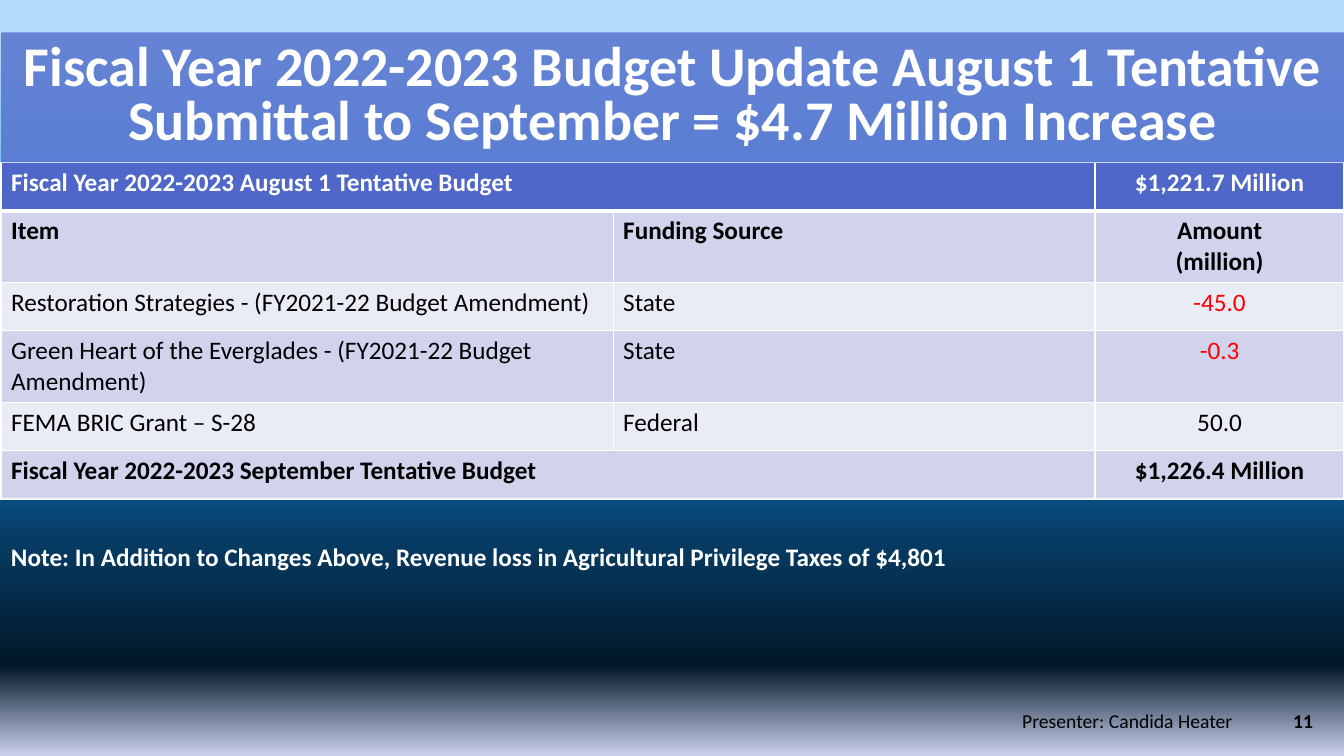
from typing import NamedTuple

from lxml.etree import SubElement
from pptx import Presentation
from pptx.dml.color import RGBColor
from pptx.enum.shapes import MSO_SHAPE
from pptx.enum.text import MSO_ANCHOR, PP_ALIGN
from pptx.oxml import parse_xml
from pptx.oxml.ns import nsdecls, qn
from pptx.util import Inches, Pt

WIDE, HIGH = Inches(13.33), Inches(7.5)
WHITE, BLACK, RED = "FFFFFF", "000000", "FF0000"
BLUE, DARK, LIGHT = "4E67C8", "D0D3EB", "E9EBF5"
LEFT, MID, RIGHT = PP_ALIGN.LEFT, PP_ALIGN.CENTER, PP_ALIGN.RIGHT
STOPS = [(3, "B4DCFA"), (17, "8CC9F7"), (36, "4FADF3"), (54, "0D79CA"),
         (71, "073C65"), (88, "031828"), (100, "CAD1EE")]


class Box(NamedTuple):
    """Place and size in percent of the slide."""
    x: float
    y: float
    w: float
    h: float


class Row(NamedTuple):
    item: str
    source: str
    amount: str
    fill: str
    high: float
    ink: str = BLACK
    tint: str = BLACK
    bold: bool = False
    span: bool = False


COLS = [45.54, 35.86, 18.53]
ONE, TWO = 6.4, 9.47  # heights of rows with one and two lines
ROWS = [
    Row("Fiscal Year 2022-2023 August 1 Tentative Budget", "", "$1,221.7 Million",
        BLUE, ONE, WHITE, WHITE, bold=True, span=True),
    Row("Item", "Funding Source", "Amount\n(million)", DARK, TWO, bold=True),
    Row("Restoration Strategies - (FY2021-22 Budget Amendment)", "State", "-45.0",
        LIGHT, ONE, tint=RED),
    Row("Green Heart of the Everglades - (FY2021-22 Budget Amendment)", "State", "-0.3",
        DARK, TWO, tint=RED),
    Row("FEMA BRIC Grant – S-28", "Federal", "50.0", LIGHT, ONE),
    Row("Fiscal Year 2022-2023 September Tentative Budget", "", "$1,226.4 Million",
        DARK, ONE, bold=True, span=True),
]


def wide(part: float) -> int:
    return round(WIDE * part / 100)


def high(part: float) -> int:
    return round(HIGH * part / 100)


def place(box: Box) -> tuple[int, int, int, int]:
    return wide(box.x), high(box.y), wide(box.w), high(box.h)


def paint(target, color: str) -> None:
    """Give a fill or a font a solid colour."""
    if hasattr(target, "solid"):
        target.solid()
        target.fore_color.rgb = RGBColor.from_string(color)
    else:
        target.color.rgb = RGBColor.from_string(color)


def write(frame, text: str, *, size: int = 18, color: str = BLACK, bold: bool = False,
          align: PP_ALIGN = LEFT, space: float | None = None) -> None:
    frame.word_wrap = True
    frame.text = text
    for para in frame.paragraphs:
        para.alignment = align
        para.line_spacing = space
        font = para.runs[0].font
        font.name, font.size, font.bold = "Calibri", Pt(size), bold
        paint(font, color)


def label(slide, box: Box, text: str, anchor: MSO_ANCHOR = MSO_ANCHOR.TOP, **form) -> None:
    frame = slide.shapes.add_textbox(*place(box)).text_frame
    write(frame, text, **form)
    frame.vertical_anchor = anchor


def border(cell, top: float, base: float) -> None:
    props = cell._tc.get_or_add_tcPr()
    for spot, (side, size) in enumerate(zip("LRTB", (1, 1, top, base))):
        props.insert(spot, parse_xml(
            f'<a:ln{side} {nsdecls("a")} w="{Pt(size)}"><a:solidFill>'
            f'<a:srgbClr val="{WHITE}"/></a:solidFill></a:ln{side}>'))


def backdrop(slide) -> None:
    fill = slide.background.fill
    fill.gradient()
    fill.gradient_angle = 270
    stops = next(slide.element.iter(qn("a:gsLst")))
    for old in list(stops):
        stops.remove(old)
    for share, color in STOPS:
        stop = SubElement(stops, qn("a:gs"), pos=str(share * 1000))
        SubElement(stop, qn("a:srgbClr"), val=color)


def budget(slide, box: Box) -> None:
    table = slide.shapes.add_table(len(ROWS), len(COLS), *place(box)).table
    table.first_row = table.horz_banding = False
    for col, part in zip(table.columns, COLS):
        col.width = wide(part)
    for at, row in enumerate(ROWS):
        table.rows[at].height = high(row.high)
        if row.span:
            table.cell(at, 0).merge(table.cell(at, 1))
        for col, text in enumerate((row.item, row.source, row.amount)):
            cell = table.cell(at, col)
            paint(cell.fill, row.fill)
            border(cell, top=3 if at == 1 else 1, base=3 if at == 0 else 1)
            if text:
                last = col == 2
                write(cell.text_frame, text, color=row.tint if last else row.ink,
                      bold=row.bold, align=MID if last else LEFT)


def banner(slide, box: Box, text: str) -> None:
    shape = slide.shapes.add_shape(MSO_SHAPE.RECTANGLE, *place(box))
    shape.shadow.inherit = False
    shape.line.fill.background()
    paint(shape.fill, BLUE)
    tone = shape.element.spPr.find(qn("a:solidFill"))[0]
    SubElement(tone, qn("a:alpha"), val="75000")
    write(shape.text_frame, text, size=40, color=WHITE, bold=True, align=MID, space=0.8)
    shape.text_frame.vertical_anchor = MSO_ANCHOR.MIDDLE


def main() -> None:
    deck = Presentation()
    deck.slide_width, deck.slide_height = WIDE, HIGH
    slide = deck.slides.add_slide(deck.slide_layouts[6])
    backdrop(slide)

    # Table and title
    budget(slide, Box(0.08, 21.47, 99.92, 44.4))
    banner(slide, Box(0.08, 4.27, 99.92, 17.2),
           "Fiscal Year 2022-2023 Budget Update August 1 Tentative "
           "Submittal to September = $4.7 Million Increase")

    # Note and footer
    label(slide, Box(0.08, 70.93, 98.72, 5.33),
          "Note: In Addition to Changes Above, Revenue loss in "
          "Agricultural Privilege Taxes of $4,801", color=WHITE, bold=True)
    label(slide, Box(75.32, 93.07, 19.8, 4.53), "Presenter: Candida Heater", size=14)
    label(slide, Box(88.45, 92.67, 9.98, 5.33), "11", MSO_ANCHOR.MIDDLE,
          size=14, bold=True, align=RIGHT)

    deck.save("out.pptx")


if __name__ == "__main__":
    main()
